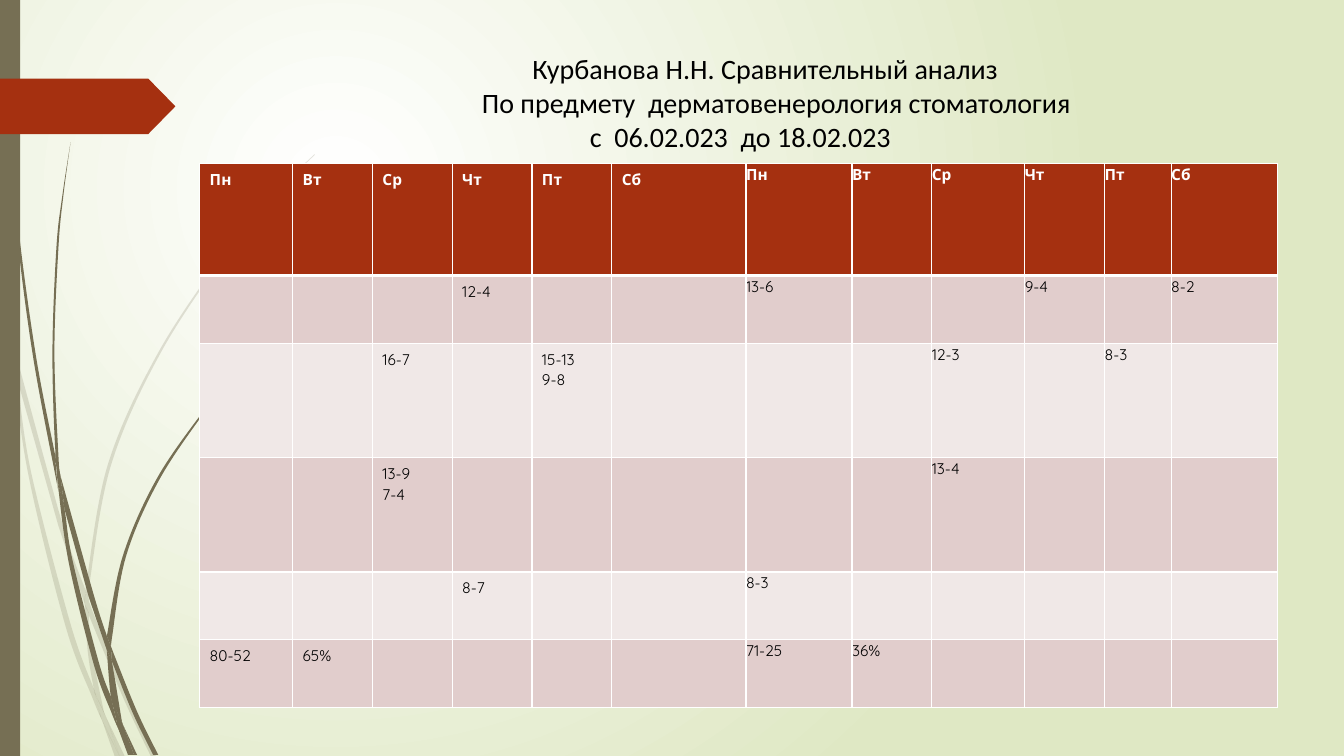
"""Build a one-slide timetable comparison with a grass motif and a results table."""
import pptx
import pptx.dml.color
import pptx.enum.shapes
import pptx.enum.text
import pptx.oxml
import pptx.oxml.ns
import pptx.util
from lxml import etree

Inches = pptx.util.Inches
Pt = pptx.util.Pt
qn = pptx.oxml.ns.qn

COLORS = {
    "white": "FFFFFF", "meadow": "DFE8C4", "grass": "766F54", "rust": "A53010",
    "band": "E1CDCC", "pale": "F0E8E7", "black": "000000",
}
TITLE = [
    ("Курбанова Н.Н. Сравнительный анализ", 3.2),
    ("По предмету  дерматовенерология стоматология", 2.7),
    ("с  06.02.023  до 18.02.023", 3.77),
]
DAYS = ["Пн", "Вт", "Ср", "Чт", "Пт", "Сб"]
RESULTS = [
    {3: "12-4", 6: "13-6", 9: "9-4", 11: "8-2"},
    {2: "16-7", 4: "15-13\n9-8", 8: "12-3", 10: "8-3"},
    {2: "13-9\n7-4", 8: "13-4"},
    {3: "8-7", 6: "8-3"},
    {0: "80-52", 1: "65%", 6: "71-25", 7: "36%"},
]
TABLE_WIDTH, TABLE_HEIGHT = 10.69, 5.4
COLUMN_SHARES = [0.92, 0.79, 0.79, 0.79, 0.79, 1.33, 1.05, 0.79, 0.92, 0.79, 0.66, 1.05]
ROW_SHARES = [1.11, 0.67, 1.13, 1.13, 0.67, 0.67]

FAINT_BLADES = [
    ([(0.11, 3.5), (0.09, 3.22), (0, 2.82)], [(0, 2.99), (0.1, 3.44), (0.11, 3.5)]),
    ([(0.58, 5.22), (0.84, 5.99)],
     [(0.85, 5.86), (0.62, 5.2), (0.14, 3.45)], [(0.17, 3.76), (0.58, 5.22)]),
    ([(0.92, 6.07), (0.88, 5.96)], [(0.88, 6.1), (1.23, 6.94), (1.5, 7.51)],
     [(1.55, 7.51), (1.27, 6.92), (0.92, 6.07)]),
    ([(1.19, 7.51), (1.24, 7.51)], [(1.05, 7.11), (1.19, 7.51)]),
    ([(0.93, 6.83), (0.7, 6.19), (0.31, 4.69), (0.17, 3.76), (0.11, 3.5)],
     [(0.11, 3.5), (0.28, 4.7), (0.65, 6.21), (0.92, 6.93), (1.01, 7.14)],
     [(0.99, 7.07), (0.93, 6.83)]),
    ([(0.84, 5.99), (0.87, 6.46), (0.93, 6.83), (0.96, 6.92), (1.05, 7.11)],
     [(1.03, 7.06), (0.91, 6.46), (0.88, 6.1), (0.88, 6.08), (0.84, 5.99)]),
    ([(0.88, 5.84), (1.1, 4.62), (1.6, 3.49), (2.29, 2.45), (2.68, 1.98), (2.9, 1.75), (3.12, 1.54)],
     [(3.12, 1.53), (2.89, 1.75), (2.68, 1.97), (2.28, 2.44), (1.58, 3.48), (1.07, 4.61),
      (0.85, 5.84)], [(0.85, 5.86), (0.88, 5.96)]),
    ([(1.01, 7.14), (1.14, 7.51)], [(1.19, 7.51), (1.01, 7.14)]),
    ([(0.88, 6.08), (0.88, 6.1), (0.88, 5.96)], [(0.85, 5.86), (0.84, 5.99), (0.88, 6.08)]),
    ([(0.96, 6.92), (0.93, 6.83)], [(0.99, 7.07), (1.01, 7.14), (1.19, 7.51)],
     [(1.19, 7.51), (1.05, 7.11), (0.96, 6.92)]),
]
DARK_BLADES = [
    ([(0.07, 1.1), (0.17, 2.33), (0.33, 3.55), (0.56, 4.77), (0.57, 4.81)],
     [(0.55, 4.57), (0.55, 4.53), (0.36, 3.55), (0.19, 2.32), (0.08, 1.09), (0.05, 0.48), (0.04, 0)],
     [(0.03, 0), (0.04, 0.48), (0.07, 1.1)]),
    ([(0.88, 5.92), (1.06, 6.45)], [(1.06, 6.33), (1.06, 6.31), (0.93, 5.9), (0.6, 4.72)],
     [(0.64, 5.05), (0.88, 5.92)]),
    ([(1.13, 6.49), (1.1, 6.41)], [(1.11, 6.56), (1.32, 7.08), (1.52, 7.49)],
     [(1.57, 7.49), (1.36, 7.06), (1.13, 6.49)]),
    ([(1.1, 6.91), (0.98, 6.57), (0.72, 5.56), (0.64, 5.05), (0.57, 4.77)],
     [(0.57, 4.77), (0.68, 5.57), (0.93, 6.59), (1.11, 7.08), (1.17, 7.22)],
     [(1.16, 7.17), (1.1, 6.91)]),
    ([(0.6, 4.72), (0.58, 4.53), (0.54, 3.49), (0.58, 2.45), (0.63, 1.93), (0.7, 1.41)],
     [(0.7, 1.41), (0.62, 1.93), (0.56, 2.45), (0.52, 3.49), (0.55, 4.49), (0.6, 4.72)]),
    ([(1.33, 7.49), (1.36, 7.49)], [(1.22, 7.19), (1.33, 7.49)]),
    ([(0.57, 4.77), (0.64, 5.05)], [(0.6, 4.72), (0.55, 4.49)], [(0.55, 4.53), (0.57, 4.77)]),
    ([(1.11, 6.33), (1.25, 5.52), (1.58, 4.76), (2.05, 4.06), (2.31, 3.74), (2.45, 3.59), (2.61, 3.44)],
     [(2.6, 3.44), (2.45, 3.58), (2.31, 3.73), (2.04, 4.05), (1.56, 4.74), (1.22, 5.51),
      (1.06, 6.31)], [(1.1, 6.41), (1.11, 6.33)]),
    ([(1.17, 7.22), (1.27, 7.49)], [(1.31, 7.49), (1.17, 7.22)]),
    ([(1.06, 6.45), (1.1, 6.91), (1.16, 7.06), (1.22, 7.19)],
     [(1.21, 7.16), (1.11, 6.56), (1.09, 6.51), (1.06, 6.45)]),
    ([(1.06, 6.45), (1.09, 6.51), (1.11, 6.56)], [(1.1, 6.41), (1.06, 6.31)],
     [(1.06, 6.33), (1.06, 6.45)]),
    ([(1.16, 7.06), (1.1, 6.91)], [(1.16, 7.17), (1.17, 7.22), (1.3, 7.49)],
     [(1.33, 7.49), (1.22, 7.19), (1.16, 7.06)]),
]


def rgb(name):
    return pptx.dml.color.RGBColor.from_string(COLORS[name])


def paint(shape, color, opacity=100):
    shape.shadow.inherit = False
    shape.fill.solid()
    shape.fill.fore_color.rgb = rgb(color)
    shape.line.fill.background()
    if opacity < 100:
        tint = next(shape.element.iter(qn("a:srgbClr")))
        etree.SubElement(tint, qn("a:alpha"), val=str(opacity * 1000))


def bend(line, before, start, end, after):
    """Turn a straight segment into a curve that follows its neighbours."""
    first = [s + (e - b) / 6 for b, s, e in zip(before, start, end)]
    second = [e - (a - s) / 6 for s, e, a in zip(start, end, after)]
    line.tag = qn("a:cubicBezTo")
    for place, (x, y) in enumerate((first, second)):
        line.insert(place, line.makeelement(qn("a:pt"), {"x": str(round(x)), "y": str(round(y))}))


def draw_blade(page, edges, opacity):
    corners = [(Inches(x), Inches(y)) for edge in edges for x, y in edge]
    builder = page.shapes.build_freeform(*corners[0])
    builder.add_line_segments(corners[1:], close=True)
    blade = builder.convert_to_shape()
    paint(blade, "grass", opacity)
    outline = next(blade.element.iter(qn("a:path")))
    points = [(int(p.get("x")), int(p.get("y"))) for p in outline.iter(qn("a:pt"))]
    lines = list(outline)
    start = 0
    for edge in edges:
        last = start + len(edge) - 1
        for place in range(start, last):
            bend(lines[place + 1], points[max(place - 1, start)], points[place],
                 points[place + 1], points[min(place + 2, last)])
        start = last + 1


def draw_background(page):
    fill = page.background.fill
    fill.gradient()
    for stop, color, position in zip(fill.gradient_stops, ("white", "meadow"), (0, 1)):
        stop.color.rgb = rgb(color)
        stop.position = position
    gradient = next(page.element.iter(qn("a:gradFill")))
    gradient.remove(gradient.find(qn("a:lin")))
    circle = etree.SubElement(gradient, qn("a:path"), path="circle")
    etree.SubElement(circle, qn("a:fillToRect"), l="50000", t="50000", r="100000", b="100000")


def draw_decor(page):
    for blades, opacity in ((FAINT_BLADES, 20), (DARK_BLADES, 100)):
        for edges in blades:
            draw_blade(page, edges, opacity)
    kinds = pptx.enum.shapes.MSO_SHAPE
    bar = page.shapes.add_shape(kinds.RECTANGLE, 0, 0, Inches(0.2), Inches(7.5))
    paint(bar, "grass")
    tag = page.shapes.add_shape(kinds.PENTAGON, 0, Inches(0.78), Inches(1.74), Inches(0.55))
    tag.adjustments[0] = 0.49
    paint(tag, "rust")


def fill_title(title):
    title.left, title.top, title.width, title.height = map(Inches, (1.98, 0.46, 10.98, 1.11))
    frame = title.text_frame
    frame.text = "\n".join(line for line, indent in TITLE)
    frame.word_wrap = True
    frame.auto_size = pptx.enum.text.MSO_AUTO_SIZE.NONE
    frame.vertical_anchor = pptx.enum.text.MSO_ANCHOR.MIDDLE
    for para, (line, indent) in zip(frame.paragraphs, TITLE):
        para.alignment = pptx.enum.text.PP_ALIGN.LEFT
        para._p.get_or_add_pPr().set("marL", str(Inches(indent)))
        para.font.name = "Calibri"
        para.font.size = Pt(20)
        para.font.color.rgb = rgb("black")


def set_borders(cell, widths):
    properties = cell._tc.get_or_add_tcPr()
    for side, width in widths.items():
        border = etree.SubElement(properties, qn(f"a:ln{side}"), w=str(Pt(width)))
        solid = etree.SubElement(border, qn("a:solidFill"))
        etree.SubElement(solid, qn("a:srgbClr"), val=COLORS["white"])


def draw_table(page):
    grid = [dict(enumerate(DAYS * 2)), *RESULTS]
    table = page.shapes.add_table(
        len(grid), len(COLUMN_SHARES), Inches(1.98), Inches(1.62),
        Inches(TABLE_WIDTH), Inches(TABLE_HEIGHT)).table
    for column, share in zip(table.columns, COLUMN_SHARES):
        column.width = Inches(TABLE_WIDTH * share / sum(COLUMN_SHARES))
    for index, (row, share) in enumerate(zip(table.rows, ROW_SHARES)):
        row.height = Inches(TABLE_HEIGHT * share / sum(ROW_SHARES))
        header = index == 0
        for place, cell in enumerate(row.cells):
            set_borders(cell, {"L": 1, "R": 1, "T": 3 if index == 1 else 1, "B": 3 if header else 1})
            cell.fill.solid()
            cell.fill.fore_color.rgb = rgb("rust" if header else "band" if index % 2 else "pale")
            if place >= len(DAYS):
                cell.margin_left = cell.margin_right = cell.margin_top = cell.margin_bottom = 0
            cell.text = grid[index].get(place, "")
            for para in cell.text_frame.paragraphs:
                para.line_spacing = 1.07
                para.font.name = "Quicksand"
                para.font.size = Pt(11)
                para.font.bold = header
                para.font.color.rgb = rgb("white" if header else "black")


def main():
    deck = pptx.Presentation()
    deck.slide_width, deck.slide_height = Inches(13.33), Inches(7.5)
    page = deck.slides.add_slide(deck.slide_layouts[5])
    draw_background(page)
    draw_decor(page)
    fill_title(page.shapes.title)
    draw_table(page)
    deck.save("out.pptx")


if __name__ == "__main__":
    main()
